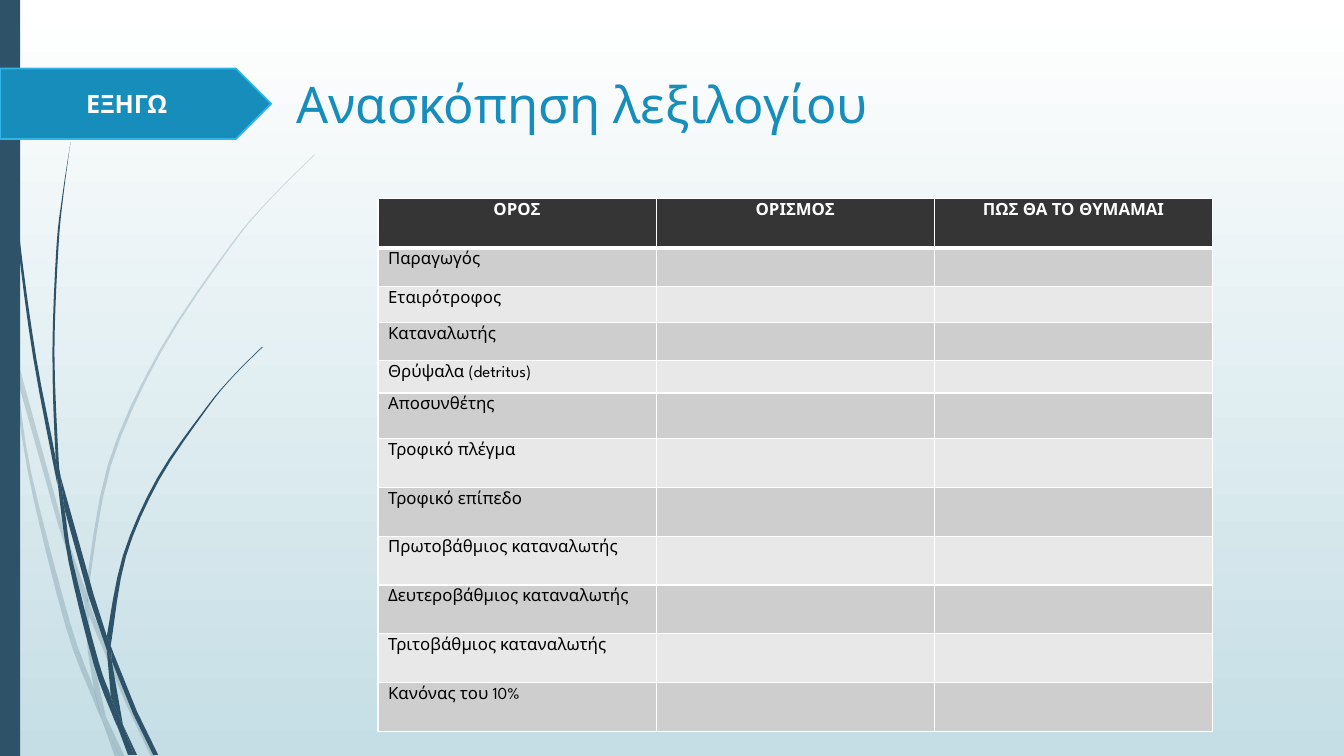
from lxml import etree
from pptx import Presentation
from pptx.dml.color import RGBColor
from pptx.enum.shapes import MSO_SHAPE
from pptx.enum.text import MSO_ANCHOR, PP_ALIGN
from pptx.oxml.ns import qn
from pptx.util import Inches, Pt

RECTANGLE, PENTAGON = MSO_SHAPE.RECTANGLE, MSO_SHAPE.PENTAGON
LEFT, CENTER = PP_ALIGN.LEFT, PP_ALIGN.CENTER
TOP, MIDDLE = MSO_ANCHOR.TOP, MSO_ANCHOR.MIDDLE

FONT = "League Spartan"
COLORS = {
    "white": "FFFFFF", "mist": "C5DEE5", "navy": "2E5369", "blue": "178DBB",
    "sky": "31B4E6", "head": "353535", "odd": "CECECE", "even": "E8E8E8",
    "black": "000000",
}
TITLE = "Ανασκόπηση λεξιλογίου"
TAG = "ΕΞΗΓΩ"
HEADINGS = ["ΟΡΟΣ", "ΟΡΙΣΜΟΣ", "ΠΩΣ ΘΑ ΤΟ ΘΥΜΑΜΑΙ"]
TERMS = [
    "Παραγωγός", "Εταιρότροφος", "Καταναλωτής", "Θρύψαλα (detritus)",
    "Αποσυνθέτης", "Τροφικό πλέγμα", "Τροφικό επίπεδο",
    "Πρωτοβάθμιος καταναλωτής", "Δευτεροβάθμιος καταναλωτής",
    "Τριτοβάθμιος καταναλωτής", "Κανόνας του 10%",
]
COLUMN_WIDTH, TABLE_HEIGHT = 2.76, 5.29
TOP_ROWS = [0.49, 0.38, 0.36, 0.38, 0.32, 0.45]
LOWER_ROWS = len(TERMS) + 1 - len(TOP_ROWS)
ROW_HEIGHTS = TOP_ROWS + [(TABLE_HEIGHT - sum(TOP_ROWS)) / LOWER_ROWS] * LOWER_ROWS

# Each blade part: left edge, right edge (knots in inches, from top to bottom)
FAINT_PARTS = [
    ([(0, 2.82), (0, 2.99), (0.1, 3.44), (0.11, 3.5)], [(0, 2.82), (0.09, 3.22), (0.11, 3.5)]),
    ([(0.14, 3.45), (0.17, 3.76), (0.58, 5.22), (0.84, 5.99)],
     [(0.14, 3.45), (0.62, 5.2), (0.85, 5.86)]),
    ([(0.88, 5.96), (0.88, 6.1), (1.23, 6.94), (1.5, 7.51)],
     [(0.88, 5.96), (0.92, 6.07), (1.27, 6.92), (1.55, 7.51)]),
    ([(1.05, 7.11), (1.19, 7.51)], [(1.05, 7.11), (1.24, 7.51)]),
    ([(0.11, 3.5), (0.28, 4.7), (0.65, 6.21), (0.92, 6.93), (1.01, 7.14)],
     [(0.11, 3.5), (0.17, 3.76), (0.31, 4.69), (0.7, 6.19), (0.93, 6.83), (1.01, 7.14)]),
    ([(0.84, 5.99), (0.87, 6.46), (0.93, 6.83), (1.05, 7.11)],
     [(0.84, 5.99), (0.88, 6.1), (0.91, 6.46), (1.05, 7.11)]),
    ([(3.12, 1.53), (2.68, 1.97), (2.28, 2.44), (1.58, 3.48), (1.07, 4.61), (0.85, 5.84)],
     [(3.12, 1.54), (2.68, 1.98), (2.29, 2.45), (1.6, 3.49), (1.1, 4.62), (0.88, 5.84),
      (0.88, 5.96)]),
    ([(1.01, 7.14), (1.14, 7.51)], [(1.01, 7.14), (1.19, 7.51)]),
    ([(0.85, 5.86), (0.84, 5.99)], [(0.88, 5.96), (0.88, 6.1)]),
    ([(0.93, 6.83), (1.01, 7.14), (1.19, 7.51)], [(0.93, 6.83), (1.05, 7.11), (1.19, 7.51)]),
]
SOLID_PARTS = [
    ([(0.03, 0), (0.07, 1.1), (0.17, 2.33), (0.33, 3.55), (0.57, 4.81)],
     [(0.04, 0), (0.08, 1.09), (0.19, 2.32), (0.36, 3.55), (0.55, 4.53), (0.57, 4.81)]),
    ([(0.6, 4.72), (0.64, 5.05), (0.88, 5.92), (1.06, 6.45)],
     [(0.6, 4.72), (0.93, 5.9), (1.06, 6.31)]),
    ([(1.1, 6.41), (1.11, 6.56), (1.32, 7.08), (1.52, 7.49)],
     [(1.1, 6.41), (1.13, 6.49), (1.36, 7.06), (1.57, 7.49)]),
    ([(0.57, 4.77), (0.68, 5.57), (0.93, 6.59), (1.11, 7.08), (1.17, 7.22)],
     [(0.57, 4.77), (0.64, 5.05), (0.72, 5.56), (0.98, 6.57), (1.1, 6.91), (1.17, 7.22)]),
    ([(0.7, 1.41), (0.62, 1.93), (0.56, 2.45), (0.52, 3.49), (0.55, 4.49), (0.6, 4.72)],
     [(0.7, 1.41), (0.63, 1.93), (0.58, 2.45), (0.54, 3.49), (0.58, 4.53), (0.6, 4.72)]),
    ([(1.22, 7.19), (1.33, 7.49)], [(1.22, 7.19), (1.36, 7.49)]),
    ([(0.55, 4.49), (0.57, 4.77), (0.64, 5.05)], [(0.55, 4.49), (0.6, 4.72), (0.64, 5.05)]),
    ([(2.6, 3.44), (2.31, 3.73), (2.04, 4.05), (1.56, 4.74), (1.22, 5.51), (1.06, 6.31)],
     [(2.61, 3.44), (2.31, 3.74), (2.05, 4.06), (1.58, 4.76), (1.25, 5.52), (1.11, 6.33),
      (1.1, 6.41)]),
    ([(1.17, 7.22), (1.27, 7.49)], [(1.17, 7.22), (1.31, 7.49)]),
    ([(1.06, 6.45), (1.1, 6.91), (1.22, 7.19)], [(1.06, 6.45), (1.11, 6.56), (1.22, 7.19)]),
    ([(1.06, 6.31), (1.06, 6.45), (1.11, 6.56)], [(1.06, 6.31), (1.1, 6.41), (1.11, 6.56)]),
    ([(1.1, 6.91), (1.17, 7.22), (1.3, 7.49)], [(1.1, 6.91), (1.22, 7.19), (1.33, 7.49)]),
]


def rgb(name):
    return RGBColor.from_string(COLORS[name])


def paint(shape, color, line=None):
    shape.shadow.inherit = False
    shape.fill.solid()
    shape.fill.fore_color.rgb = rgb(color)
    if line:
        shape.line.color.rgb = rgb(line)
        shape.line.width = Pt(1.25)
    else:
        shape.line.fill.background()


def write(frame, text, size, color, bold=False, align=LEFT):
    frame.text = text
    para = frame.paragraphs[0]
    para.alignment = align
    for span in para.runs:
        span.font.name = FONT
        span.font.size = Pt(size)
        span.font.bold = bold
        span.font.color.rgb = rgb(color)


def smooth(knots, steps=4):
    """Return points on a Catmull-Rom curve through the knots of a long edge."""
    if len(knots) < 5:
        return knots
    padded = [knots[0], *knots, knots[-1]]
    points = [knots[0]]
    for a, b, c, d in zip(padded, padded[1:], padded[2:], padded[3:]):
        for step in range(1, steps + 1):
            t = step / steps
            points.append(tuple(
                (2 * q + (r - p) * t + (2 * p - 5 * q + 4 * r - s) * t ** 2
                 + (3 * q - p - 3 * r + s) * t ** 3) / 2
                for p, q, r, s in zip(a, b, c, d)))
    return points


def add_blade_part(slide, left_edge, right_edge, opacity):
    outline = [(Inches(x), Inches(y))
               for x, y in smooth(left_edge) + smooth(right_edge)[::-1]]
    builder = slide.shapes.build_freeform(*outline[0])
    builder.add_line_segments(outline[1:], close=True)
    part = builder.convert_to_shape()
    paint(part, "navy")
    if opacity < 100:
        color = part.fill._xPr.find(qn("a:solidFill"))[0]
        etree.SubElement(color, qn("a:alpha"), val=str(opacity * 1000))


def add_borders(cell, widths):
    properties = cell._tc.get_or_add_tcPr()
    for side, width in widths.items():
        line = etree.SubElement(properties, qn(f"a:ln{side}"), w=str(Pt(width)))
        fill = etree.SubElement(line, qn("a:solidFill"))
        etree.SubElement(fill, qn("a:srgbClr"), val=COLORS["white"])


def add_vocabulary(slide):
    rows = [HEADINGS] + [[term, "", ""] for term in TERMS]
    table = slide.shapes.add_table(
        len(rows), len(HEADINGS), Inches(3.75), Inches(1.97),
        Inches(COLUMN_WIDTH * len(HEADINGS)), Inches(TABLE_HEIGHT)).table
    for column in table.columns:
        column.width = Inches(COLUMN_WIDTH)
    for number, (texts, height) in enumerate(zip(rows, ROW_HEIGHTS)):
        table.rows[number].height = Inches(height)
        header = number == 0
        fill = "head" if header else ("even", "odd")[number % 2]
        widths = {"L": 1, "R": 1, "T": 3 if number == 1 else 1, "B": 3 if header else 1}
        for cell, text in zip(table.rows[number].cells, texts):
            add_borders(cell, widths)
            cell.fill.solid()
            cell.fill.fore_color.rgb = rgb(fill)
            cell.margin_top, cell.margin_bottom = Inches(0.05), 0
            if text:
                write(cell.text_frame, text, 12, "white" if header else "black",
                      header, CENTER if header else LEFT)
            else:
                para = cell.text_frame.paragraphs[0]
                etree.SubElement(para._p, qn("a:endParaRPr"), sz="1200")


def main():
    deck = Presentation()
    deck.slide_width, deck.slide_height = Inches(40 / 3), Inches(7.5)
    slide = deck.slides.add_slide(deck.slide_layouts[6])

    backdrop = slide.background.fill
    backdrop.gradient()
    backdrop.gradient_angle = 270
    for stop, color, position in zip(backdrop.gradient_stops, ("white", "mist"), (0, 1)):
        stop.color.rgb = rgb(color)
        stop.position = position

    for parts, opacity in ((FAINT_PARTS, 20), (SOLID_PARTS, 100)):
        for left_edge, right_edge in parts:
            add_blade_part(slide, left_edge, right_edge, opacity)
    side_bar = slide.shapes.add_shape(RECTANGLE, 0, 0, Inches(0.2), deck.slide_height)
    paint(side_bar, "navy")

    title = slide.shapes.add_textbox(Inches(2.84), Inches(0.68), Inches(9.75), Inches(1.4))
    title.text_frame.word_wrap = True
    title.text_frame.vertical_anchor = TOP
    write(title.text_frame, TITLE, 36, "blue")

    tag = slide.shapes.add_shape(PENTAGON, 0, Inches(0.68), Inches(2.69), Inches(0.7))
    paint(tag, "blue", "sky")
    tag.text_frame.vertical_anchor = MIDDLE
    write(tag.text_frame, TAG, 18, "white", True, CENTER)

    add_vocabulary(slide)
    deck.save("out.pptx")


if __name__ == "__main__":
    main()
